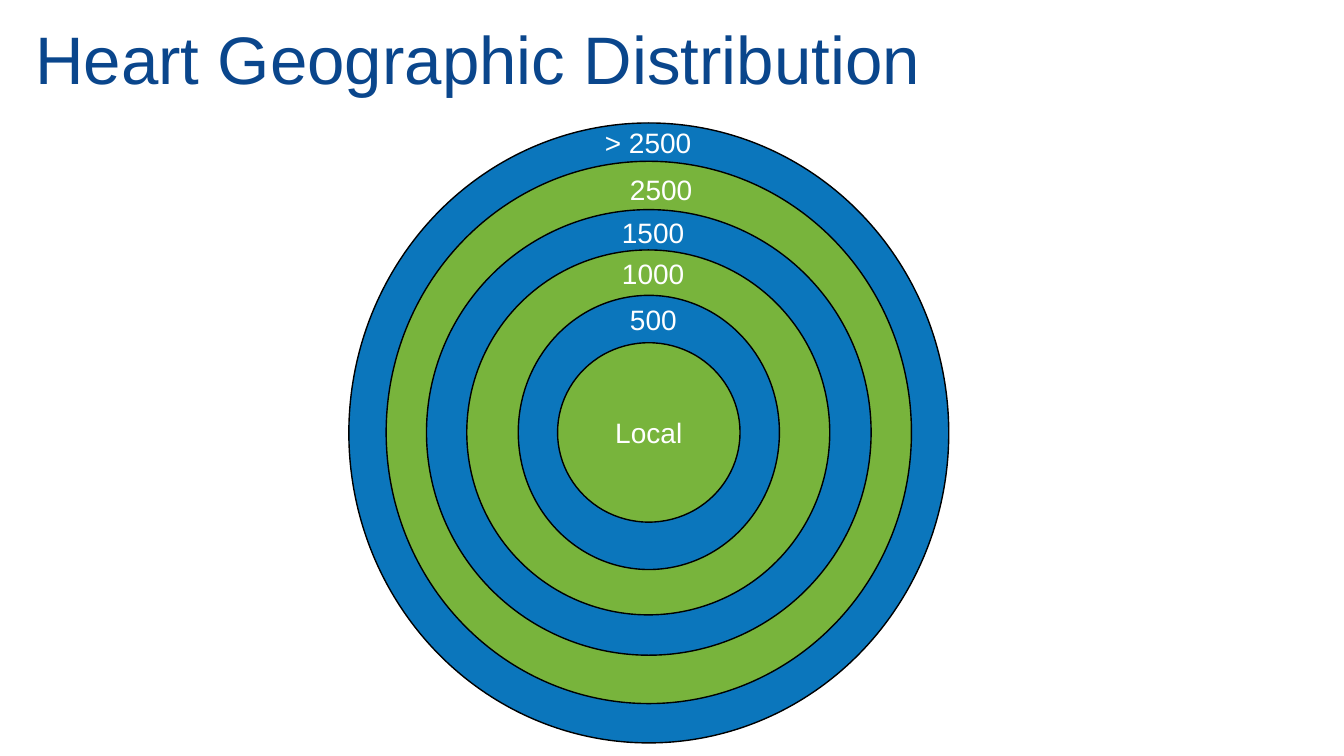
"""Build the heart distribution slide: concentric distance zones with labels."""
from typing import NamedTuple

from pptx import Presentation
from pptx import util as u
from pptx.dml.color import RGBColor
from pptx.enum import shapes, text

PX = 9144
CENTER_X, CENTER_Y = 643, 429
LABEL_HEIGHT = 44
BLUE = RGBColor(0x0B, 0x76, 0xBC)
GREEN = RGBColor(0x78, 0xB4, 0x3C)
NAVY = RGBColor(0x0A, 0x46, 0x8C)
WHITE = RGBColor(0xFF, 0xFF, 0xFF)
BLACK = RGBColor(0, 0, 0)


class Zone(NamedTuple):
    """Size of one ellipse, in px."""
    width: int
    height: int


class Label(NamedTuple):
    """Words and place of one text box, in px."""
    words: str
    left: int
    top: int
    width: int
    height: int = LABEL_HEIGHT


ZONES = [Zone(595, 615), Zone(521, 538), Zone(441, 442),
         Zone(360, 362), Zone(259, 272), Zone(181, 178)]
TITLE = Label("Heart Geographic Distribution", 25, 5, 1182, 105)
DISTANCES = [Label("500", 615, 295, 97), Label("1000", 607, 250, 111),
             Label("1500", 607, 209, 110), Label("2500", 615, 166, 103),
             Label("> 2500", 590, 120, 128)]


def px(length: int) -> int:
    """Turn px into EMU."""
    return u.Emu(length * PX)


def write(frame, words: str, size: int, color: RGBColor, **layout) -> None:
    """Put one formatted line into a text frame."""
    for name, value in layout.items():
        setattr(frame, name, value)
    line = frame.paragraphs[0]
    run = line.add_run()
    run.text = words
    for name, value in {"name": "Arial", "size": u.Pt(size)}.items():
        setattr(run.font, name, value)
    run.font.color.rgb = color


def draw_zone(slide, zone: Zone, fill: RGBColor):
    """Draw one ellipse around the common centre."""
    ellipse = slide.shapes.add_shape(
        shapes.MSO_SHAPE.OVAL, px(CENTER_X - zone.width // 2),
        px(CENTER_Y - zone.height // 2), px(zone.width), px(zone.height))
    ellipse.shadow.inherit = False
    ellipse.fill.solid()
    ellipse.fill.fore_color.rgb = fill
    ellipse.line.color.rgb = BLACK
    ellipse.line.width = u.Pt(1)
    return ellipse


def draw_label(slide, label: Label, size: int, color: RGBColor, **layout) -> None:
    """Draw one text box."""
    box = slide.shapes.add_textbox(*map(px, label[1:]))
    write(box.text_frame, label.words, size, color, word_wrap=True, **layout)


def main() -> None:
    """Build and save the slide."""
    deck = Presentation()
    deck.slide_width, deck.slide_height = u.Inches(13.33), u.Inches(7.5)
    slide = deck.slides.add_slide(deck.slide_layouts[6])
    draw_label(slide, TITLE, 48, NAVY, vertical_anchor=text.MSO_ANCHOR.MIDDLE)
    for index, zone in enumerate(ZONES):
        core = draw_zone(slide, zone, GREEN if index % 2 else BLUE)
    write(core.text_frame, "Local", 20, WHITE, word_wrap=False,
          vertical_anchor=text.MSO_ANCHOR.MIDDLE)
    core.text_frame.paragraphs[0].alignment = text.PP_ALIGN.CENTER
    for distance in DISTANCES:
        draw_label(slide, distance, 20, WHITE,
                   auto_size=text.MSO_AUTO_SIZE.SHAPE_TO_FIT_TEXT)
    deck.save("out.pptx")


if __name__ == "__main__":
    main()
